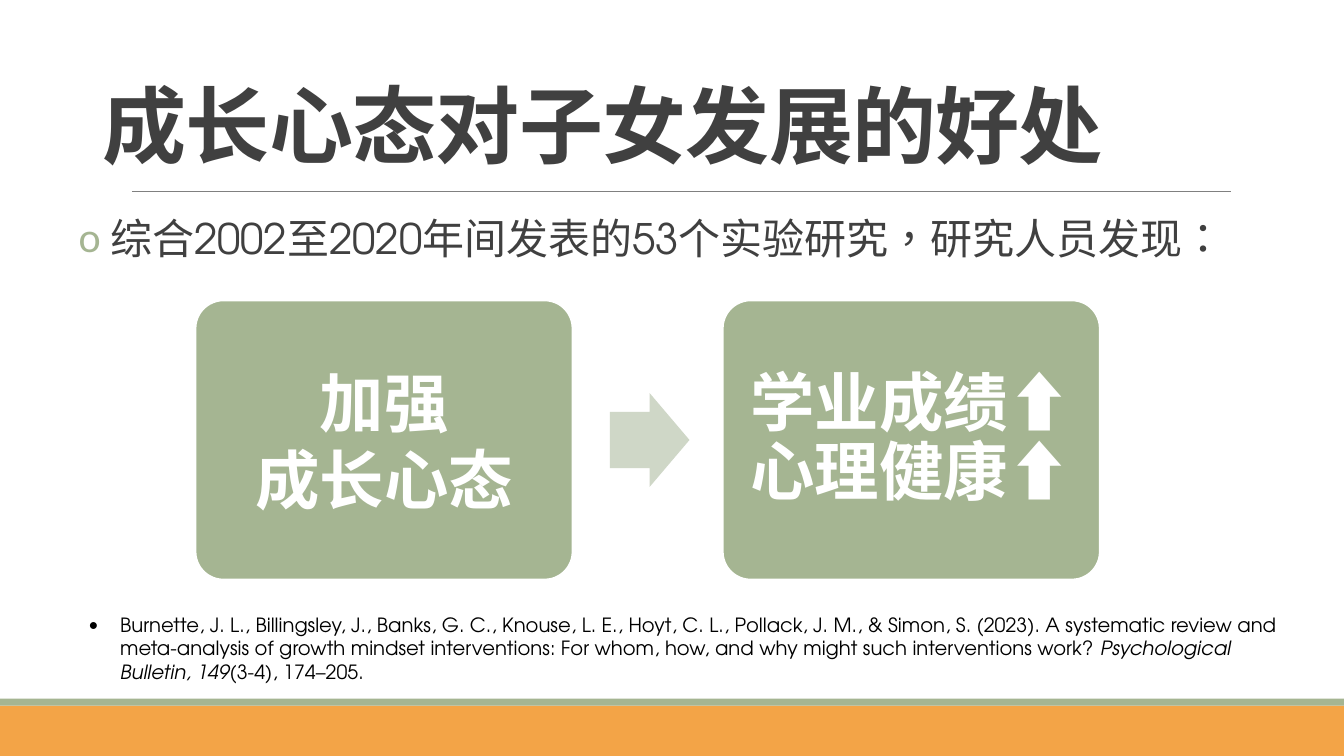
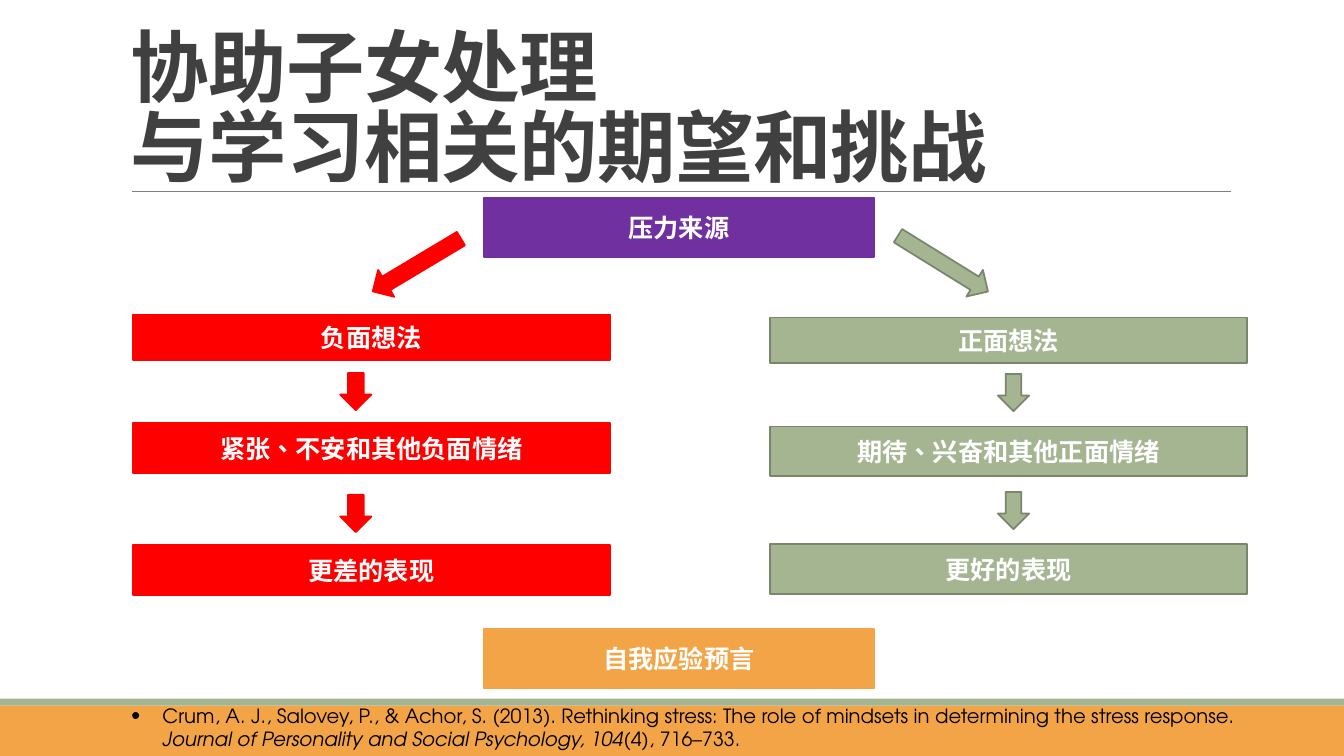
from lxml import etree
from pptx import Presentation
from pptx.dml.color import RGBColor
from pptx.enum.lang import MSO_LANGUAGE_ID
from pptx.enum.shapes import MSO_CONNECTOR, MSO_SHAPE
from pptx.enum.text import MSO_ANCHOR, PP_ALIGN
from pptx.oxml.ns import qn
from pptx.util import Pt

RECT, ROUNDED = MSO_SHAPE.RECTANGLE, MSO_SHAPE.ROUNDED_RECTANGLE
RIGHT_ARROW, DOWN_ARROW = MSO_SHAPE.RIGHT_ARROW, MSO_SHAPE.DOWN_ARROW
TOP, MIDDLE, BOTTOM = MSO_ANCHOR.TOP, MSO_ANCHOR.MIDDLE, MSO_ANCHOR.BOTTOM
LEFT, CENTER = PP_ALIGN.LEFT, PP_ALIGN.CENTER
CHINESE = MSO_LANGUAGE_ID.TRADITIONAL_CHINESE
LATIN_FONT, CJK_FONT = "TeX Gyre Adventor", "Noto Sans CJK SC"

WIDTH, HEIGHT = 960, 540
COLORS = {
    "orange": "F3A447", "green": "A5B592", "green_edge": "7A866C",
    "pale_green": "CFD7C7", "red": "FF0000", "purple": "7030A0",
    "title": "404040", "rule": "808080", "white": "FFFFFF", "black": "000000",
}
TITLE = {"bold": True, "color": "title"}
BODY = {"size": 30, "color": "title"}
CARD = {"size": 46, "bold": True, "color": "white"}
LABEL = {"size": 18, "bold": True, "color": "white"}
REFERENCE = {"size": 14, "color": "black"}
ARROW_SIZE = (22.3, 26.6)


def rgb(name):
    return RGBColor.from_string(COLORS[name])


def add_run(p, text, style):
    r = p.add_run()
    r.text = text
    values = {"name": LATIN_FONT, "language_id": CHINESE, **style}
    values["size"] = Pt(values["size"])
    r.font.color.rgb = rgb(values.pop("color"))
    spacing = values.pop("spacing", None)
    for key, value in values.items():
        setattr(r.font, key, value)
    rPr = r.font._element
    if spacing is not None:
        rPr.set("spc", str(spacing))
    etree.SubElement(rPr, qn("a:ea")).set("typeface", CJK_FONT)


def add_lines(p, text, style):
    for i, line in enumerate(text.split("\n")):
        if i:
            p.add_line_break()
        add_run(p, line, style)


def add_bullet(p, char, indent, color):
    pPr = p._p.get_or_add_pPr()
    pPr.set("marL", str(Pt(indent)))
    pPr.set("indent", str(-Pt(indent)))
    bu_color = etree.SubElement(pPr, qn("a:buClr"))
    etree.SubElement(bu_color, qn("a:srgbClr")).set("val", COLORS[color])
    etree.SubElement(pPr, qn("a:buFont")).set("typeface", "+mn-lt")
    etree.SubElement(pPr, qn("a:buChar")).set("char", char)


def set_frame(shape, anchor=TOP, align=LEFT, insets=(7.2, 3.6, 7.2, 3.6)):
    """Prepare the text frame and return its first paragraph."""
    tf = shape.text_frame
    tf.word_wrap = True
    tf.vertical_anchor = anchor
    for side, inset in zip(("left", "top", "right", "bottom"), insets):
        setattr(tf, f"margin_{side}", Pt(inset))
    p = tf.paragraphs[0]
    p.alignment = align
    return p


def add_shape(s, kind, box, fill, edge=None, rotation=0):
    shape = s.shapes.add_shape(kind, *map(Pt, box))
    shape.shadow.inherit = False
    shape.fill.solid()
    shape.fill.fore_color.rgb = rgb(fill)
    shape.rotation = rotation
    if edge:
        shape.line.color.rgb = rgb(edge)
        shape.line.width = Pt(1.25)
    else:
        shape.line.fill.background()
    return shape


def add_textbox(s, box, **frame):
    return set_frame(s.shapes.add_textbox(*map(Pt, box)), **frame)


def add_label(s, box, text, fill, edge):
    p = set_frame(add_shape(s, RECT, box, fill, edge), MIDDLE, CENTER)
    add_run(p, text, LABEL)


def add_base(prs):
    """Add a slide with the bottom bands and the rule under the title."""
    s = prs.slides.add_slide(prs.slide_layouts[6])
    add_shape(s, RECT, (0, 504, WIDTH, 36), "orange")
    add_shape(s, RECT, (0, 499, WIDTH, 5), "green")
    rule = s.shapes.add_connector(
        MSO_CONNECTOR.STRAIGHT, Pt(94.3), Pt(136.8), Pt(879.1), Pt(136.8))
    rule.line.color.rgb = rgb("rule")
    rule.line.width = Pt(0.5)
    etree.SubElement(rule._element.spPr, qn("a:effectLst"))
    return s


def add_title(s, box, text, size):
    p = add_textbox(s, box, anchor=BOTTOM)
    p.line_spacing = 0.85
    add_lines(p, text, {**TITLE, "size": size, "spacing": -50})


def add_reference(s, box, before, journal, after):
    p = add_textbox(s, box)
    add_bullet(p, "•", 22.5, "black")
    for text, italic in ((before, False), (journal, True), (after, False)):
        add_run(p, text, {**REFERENCE, "italic": italic})


def add_finding(s, box, text):
    p = add_textbox(s, box, insets=(0, 3.6, 0, 3.6))
    p.line_spacing, p.space_before, p.space_after = 0.9, Pt(12), Pt(2)
    add_bullet(p, "o", 7.2, "green")
    add_run(p, " ", {**BODY, "name": CJK_FONT})
    add_run(p, text, BODY)


def add_cause_effect(s, box, cards):
    """Draw two cards at the ends of the box with an arrow between them."""
    left, top, width, height = box
    card_width = 269.3
    pitch = width - card_width
    for i, (text, spacing) in enumerate(cards):
        card = add_shape(s, ROUNDED, (left + i * pitch, top, card_width, height),
                         "green", "white")
        card.adjustments[0] = 0.1
        p = set_frame(card, MIDDLE, CENTER, (8, 13.7, 8, 13.7))
        p.line_spacing = spacing
        add_lines(p, text, CARD)
    arrow_box = (left + 295.9, top + (height - 67) / 2, 56.9, 67)
    arrow = add_shape(s, RIGHT_ARROW, arrow_box, "pale_green")
    arrow.adjustments[0], arrow.adjustments[1] = 0.6, 0.5


def add_path(s, left, top, steps, arrow_left, arrow_tops, fill, edge):
    """Draw a column of steps with arrows; tops count from the column top."""
    for text, step_top, height in steps:
        add_label(s, (left, top + step_top, 340.6, height), text, fill, edge)
    for arrow_top in arrow_tops:
        add_shape(s, DOWN_ARROW, (left + arrow_left, top + arrow_top, *ARROW_SIZE),
                  fill, edge)


def build_benefits(prs):
    s = add_base(prs)
    add_title(s, (66.2, 24, 828, 104.2), "成长心态对子女发展的好处", 60)
    add_finding(s, (56.2, 152, 866, 51),
                "综合2002至2020年间发表的53个实验研究，研究人员发现：")
    add_cause_effect(s, (139.7, 214.6, 645.9, 199.4),
                     (("加强\n成长心态", 1.0), ("学业成绩⬆\n心理健康⬆", 0.9)))
    add_reference(
        s, (56.2, 434.2, 864.7, 58.3),
        "Burnette, J. L., Billingsley, J., Banks, G. C., Knouse, L. E., Hoyt, C. L., "
        "Pollack, J. M., & Simon, S. (2023). A systematic review and meta-analysis of "
        "growth mindset interventions: For whom, how, and why might such "
        "interventions work? ",
        "Psychological Bulletin, 149", "(3-4), 174–205.")


def build_stress_paths(prs):
    s = add_base(prs)
    add_title(s, (86.4, 46, 792, 95), "协助子女处理\n与学习相关的期望和挑战", 56)
    for top, text, color in ((141.1, "压力来源", "purple"),
                             (449.3, "自我应验预言", "orange")):
        add_label(s, (345.6, top, 278.6, 42.5), text, color, color)
    negative, positive = ("red", "red"), ("green", "green_edge")
    add_shape(s, DOWN_ARROW, (286.6, 152.6, 22.3, 73.4), *negative, rotation=59.1)
    add_shape(s, DOWN_ARROW, (662.4, 150.5, 22.3, 75.6), *positive, rotation=301.8)
    add_path(s, 95, 224.6,
             (("负面想法", 0, 32.4), ("紧张、不安和其他负面情绪", 77.8, 35.3),
              ("更差的表现", 164.9, 35.3)),
             148, (41.8, 128.9), *negative)
    add_path(s, 550.1, 226.8,
             (("正面想法", 0, 32.4), ("期待、兴奋和其他正面情绪", 77.8, 35.3),
              ("更好的表现", 162, 35.3)),
             162.7, (40.3, 124.6), *positive)
    add_reference(
        s, (86.4, 499, 823.7, 41),
        "Crum, A. J., Salovey, P., & Achor, S. (2013). Rethinking stress: The role of "
        "mindsets in determining the stress response. ",
        "Journal of Personality and Social Psychology, 104", "(4), 716–733.")


def main():
    prs = Presentation()
    prs.slide_width, prs.slide_height = Pt(WIDTH), Pt(HEIGHT)
    build_benefits(prs)
    build_stress_paths(prs)
    prs.save("out.pptx")


if __name__ == "__main__":
    main()
